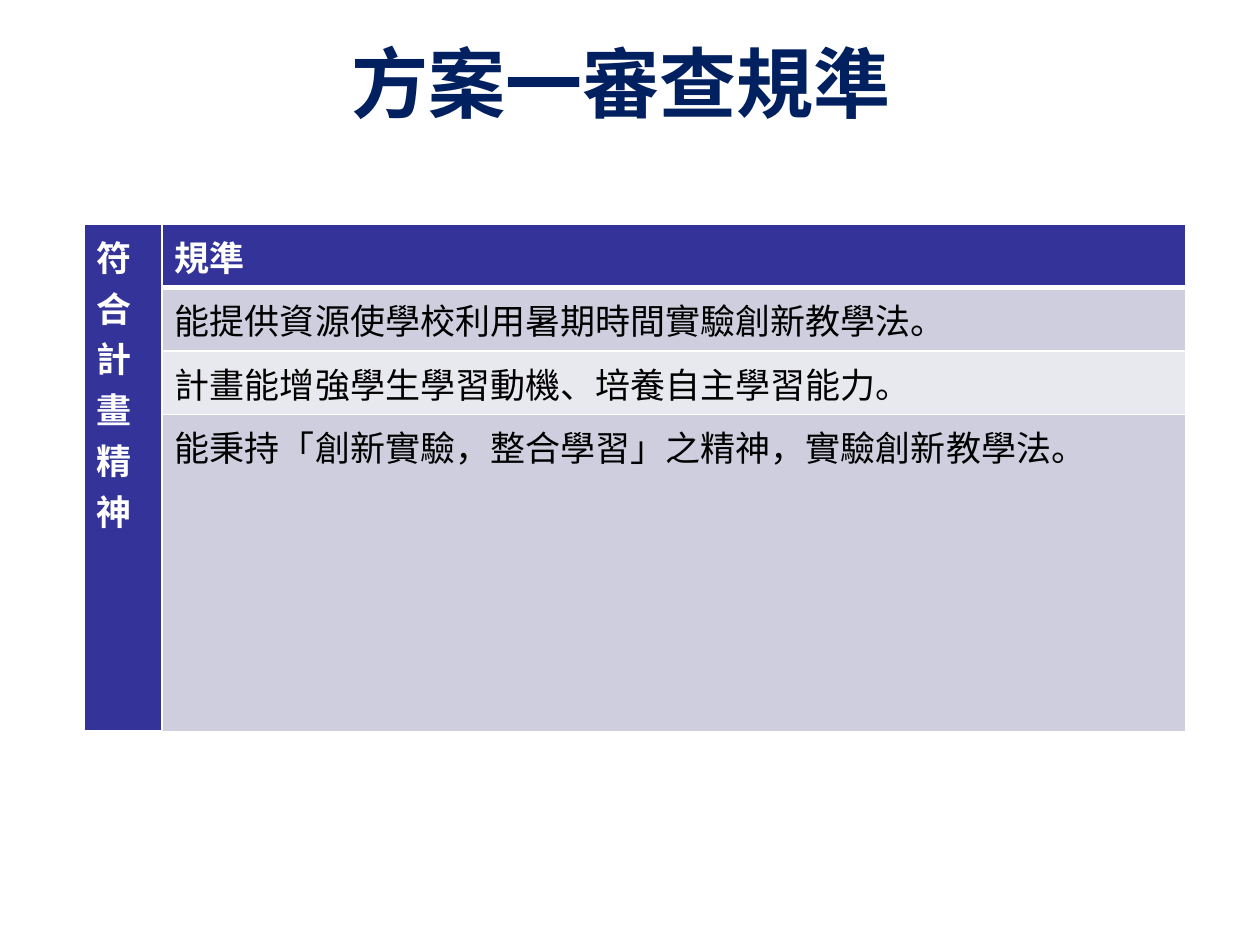
"""Build the slide with the review criteria of plan one."""
from lxml.etree import SubElement as Sub
from pptx import Presentation as Deck
from pptx.dml.color import RGBColor as Rgb
from pptx.enum.text import MSO_ANCHOR as Anchor, PP_ALIGN as Align
from pptx.oxml.ns import qn
from pptx.util import Cm, Pt

TITLE = "方案一審查規準"
SIDE = "符合計畫精神"
HEAD = "規準"
RULES = [
    "能提供資源使學校利用暑期時間實驗創新教學法。",
    "計畫能增強學生學習動機、培養自主學習能力。",
    "能秉持「創新實驗，整合學習」之精神，實驗創新教學法。",
]

THEME = {
    "font": "Noto Sans CJK SC",
    "head": "333399",
    "bands": ["CECEDE", "E8E8EF"],
    "line": "FFFFFF",
    "title": {"size": Pt(44), "bold": True, "color": "002060"},
    "label": {"size": Pt(20), "bold": True, "color": "FFFFFF"},
    "body": {"size": Pt(20), "bold": False, "color": "000000"},
}
TITLE_BOX = {"left": Cm(1.09), "top": Cm(0.05), "width": Cm(22.86), "height": Cm(3.18)}
GRID_BOX = {"left": Cm(1.7), "top": Cm(4.52), "width": Cm(22.2), "height": Cm(5.33)}
COLS = [Cm(1.57), Cm(20.63)]
HEAD_ROW, RULE_ROW = Cm(0.99), Cm(1.04)


def put(item, values):
    for name, value in values.items():
        setattr(item, name, value)


def write(frame, text, style):
    run = frame.paragraphs[0].add_run()
    run.text = text
    put(run.font, {"name": THEME["font"], "size": style["size"], "bold": style["bold"]})
    run.font.color.rgb = Rgb.from_string(style["color"])
    Sub(run._r.get_or_add_rPr(), qn("a:ea"), typeface=THEME["font"])


def paint(cell, fill, base):
    props = cell._tc.get_or_add_tcPr()
    for side, width in {"L": 1, "R": 1, "T": 1, "B": base}.items():
        line = Sub(props, qn(f"a:ln{side}"), w=str(Pt(width)))
        Sub(Sub(line, qn("a:solidFill")), qn("a:srgbClr"), val=THEME["line"])
    cell.fill.solid()
    cell.fill.fore_color.rgb = Rgb.from_string(fill)


def add_title(slide):
    title = slide.shapes.title
    put(title, TITLE_BOX)
    put(title.text_frame, {"vertical_anchor": Anchor.MIDDLE, "word_wrap": True})
    write(title.text_frame, TITLE, THEME["title"])
    title.text_frame.paragraphs[0].alignment = Align.CENTER


def add_grid(slide):
    grid = slide.shapes.add_table(len(RULES) + 1, len(COLS), **GRID_BOX).table
    for col, width in zip(grid.columns, COLS):
        col.width = width
    for row, text in enumerate([HEAD] + RULES):
        top = row == 0
        grid.rows[row].height = HEAD_ROW if top else RULE_ROW
        fill = THEME["head"] if top else THEME["bands"][(row - 1) % 2]
        base = 3 if top else 1
        paint(grid.cell(row, 0), THEME["head"], base)
        paint(grid.cell(row, 1), fill, base)
        write(grid.cell(row, 1).text_frame, text, THEME["label" if top else "body"])
    grid.cell(0, 0).merge(grid.cell(len(RULES), 0))
    write(grid.cell(0, 0).text_frame, SIDE, THEME["label"])


def main():
    deck = Deck()
    put(deck, {"slide_width": Cm(25.4), "slide_height": Cm(19.05)})
    slide = deck.slides.add_slide(deck.slide_layouts[5])
    add_title(slide)
    add_grid(slide)
    deck.save("out.pptx")


if __name__ == "__main__":
    main()
